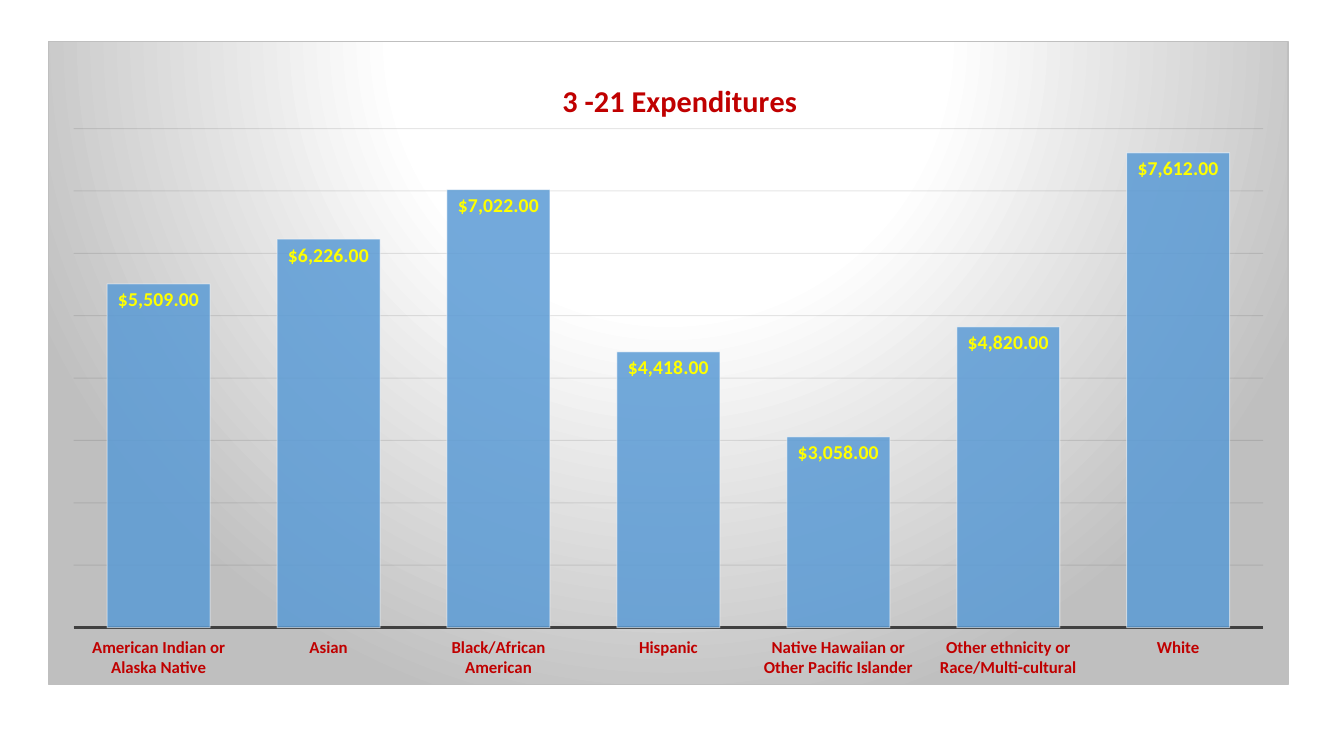
"""Builds a slide with a column chart of expenditures by ethnic group."""
from typing import NamedTuple

from lxml import etree
from pptx import Presentation
from pptx.chart.chart import Chart
from pptx.chart.data import CategoryChartData
from pptx.dml.color import RGBColor
from pptx.enum.chart import XL_CHART_TYPE, XL_LABEL_POSITION, XL_TICK_LABEL_POSITION, XL_TICK_MARK
from pptx.oxml import parse_xml
from pptx.oxml.ns import nsdecls, qn
from pptx.text.text import Font
from pptx.util import Inches, Pt

COLUMNS = XL_CHART_TYPE.COLUMN_CLUSTERED
INSIDE_END = XL_LABEL_POSITION.INSIDE_END
LOW = XL_TICK_LABEL_POSITION.LOW
NO_TICK = XL_TICK_MARK.NONE

COLORS = {
    "heading": "C00000",
    "bar": "5B9BD5",
    "bar_edge": "FFFFFF",
    "amount": "FFFF00",
    "axis": "404040",
    "grid": "0D0D0D",
    "text": "000000",
    "center": "FFFFFF",
    "rim": "BFBFBF",
}
FONT = "Calibri"
DOLLARS = '_("$"* #,##0.00_);_("$"* \\(#,##0.00\\);_("$"* "-"??_);_(@_)'


class Spending(NamedTuple):
    group: str
    amount: int


class Opacity(NamedTuple):
    target: str
    percent: int


SPENDING = [
    Spending("American Indian or Alaska Native", 5509),
    Spending("Asian", 6226),
    Spending("Black/African American", 7022),
    Spending("Hispanic", 4418),
    Spending("Native Hawaiian or Other Pacific Islander", 3058),
    Spending("Other ethnicity or Race/Multi-cultural", 4820),
    Spending("White", 7612),
]
OPACITIES = [
    Opacity(".//c:ser/c:spPr/a:solidFill/a:srgbClr", 85),
    Opacity(".//c:ser/c:spPr/a:ln//a:srgbClr", 50),
    Opacity(".//c:majorGridlines//a:srgbClr", 10),
]


def rgb(name: str) -> RGBColor:
    return RGBColor.from_string(COLORS[name])


def style_font(font: Font, size: float, color: str, bold: bool) -> None:
    font.name = FONT
    font.size = Pt(size)
    font.bold = bold
    font.color.rgb = rgb(color)


def layout(x: float, y: float, extent: str = "", target: str = "") -> etree._Element:
    return parse_xml(
        f'<c:layout {nsdecls("c")}><c:manualLayout>{target}'
        '<c:xMode val="edge"/><c:yMode val="edge"/>'
        f'<c:x val="{x}"/><c:y val="{y}"/>{extent}</c:manualLayout></c:layout>'
    )


def add_backdrop(chart: Chart) -> None:
    stops = "".join(
        f'<a:gs pos="{percent * 1000}"><a:srgbClr val="{COLORS[name]}"/></a:gs>'
        for percent, name in [(0, "center"), (39, "center"), (100, "rim")]
    )
    backdrop = parse_xml(
        f'<c:spPr {nsdecls("c", "a")}><a:gradFill><a:gsLst>{stops}</a:gsLst>'
        '<a:path path="circle"><a:fillToRect l="50000" t="-80000" r="50000" b="180000"/></a:path>'
        f'</a:gradFill><a:ln w="{Pt(0.75)}"><a:solidFill><a:srgbClr val="{COLORS["rim"]}"/>'
        "</a:solidFill></a:ln></c:spPr>"
    )
    chart.element.find(qn("c:chart")).addnext(backdrop)


def add_title(chart: Chart) -> None:
    frame = chart.chart_title.text_frame
    run = frame.paragraphs[0].add_run()
    run.text = "3 -21 Expenditures"
    style_font(run.font, 21.6, "heading", True)
    title = chart.element.xpath("c:chart/c:title")[0]
    for automatic in title.findall(qn("c:layout")):
        title.remove(automatic)
    title.find(qn("c:tx")).addnext(layout(0.41, 0.05))
    chart.chart_title.include_in_layout = False


def place_plot(chart: Chart) -> None:
    plot_area = chart.element.xpath("c:chart/c:plotArea")[0]
    for automatic in plot_area.findall(qn("c:layout")):
        plot_area.remove(automatic)
    inner = '<c:layoutTarget val="inner"/>'
    plot_area.insert(0, layout(0.02, 0.135, '<c:w val="0.96"/><c:h val="0.776"/>', inner))


def style_axes(chart: Chart) -> None:
    groups = chart.category_axis
    groups.major_tick_mark = groups.minor_tick_mark = NO_TICK
    groups.tick_label_position = LOW
    groups.format.line.color.rgb = rgb("axis")
    groups.format.line.width = Pt(1.5)
    style_font(groups.tick_labels.font, 12, "heading", True)

    dollars = chart.value_axis
    dollars.visible = False
    dollars.minimum_scale, dollars.maximum_scale, dollars.major_unit = 0, 8000, 1000
    dollars.tick_labels.number_format = DOLLARS
    dollars.tick_labels.number_format_is_linked = False
    dollars.has_major_gridlines = True
    grid = dollars.major_gridlines.format.line
    grid.color.rgb = rgb("grid")
    grid.width = Pt(0.75)


def style_bars(chart: Chart) -> None:
    plot = chart.plots[0]
    plot.gap_width = 65
    plot.vary_by_categories = False
    bars = plot.series[0]
    bars.format.fill.solid()
    bars.format.fill.fore_color.rgb = rgb("bar")
    bars.format.line.color.rgb = rgb("bar_edge")
    bars.format.line.width = Pt(0.75)
    amounts = bars.data_labels
    amounts.show_value = True
    amounts.position = INSIDE_END
    amounts.number_format = DOLLARS
    amounts.number_format_is_linked = False
    style_font(amounts.font, 14, "amount", True)


def apply_opacity(chart: Chart, opacity: Opacity) -> None:
    for color in chart.element.xpath(opacity.target):
        etree.SubElement(color, qn("a:alpha"), val=str(opacity.percent * 1000))


def main() -> None:
    deck = Presentation()
    deck.slide_width, deck.slide_height = Inches(13.33), Inches(7.5)
    slide = deck.slides.add_slide(deck.slide_layouts[6])

    data = CategoryChartData(number_format=DOLLARS)
    data.categories = [spending.group for spending in SPENDING]
    data.add_series("Series 1", [spending.amount for spending in SPENDING])
    chart = slide.shapes.add_chart(
        COLUMNS, Inches(0.48), Inches(0.41), Inches(12.3), Inches(6.39), data
    ).chart
    chart.has_legend = False
    style_font(chart.font, 10, "text", False)

    add_backdrop(chart)
    add_title(chart)
    place_plot(chart)
    style_axes(chart)
    style_bars(chart)
    for opacity in OPACITIES:
        apply_opacity(chart, opacity)
    deck.save("out.pptx")


if __name__ == "__main__":
    main()
